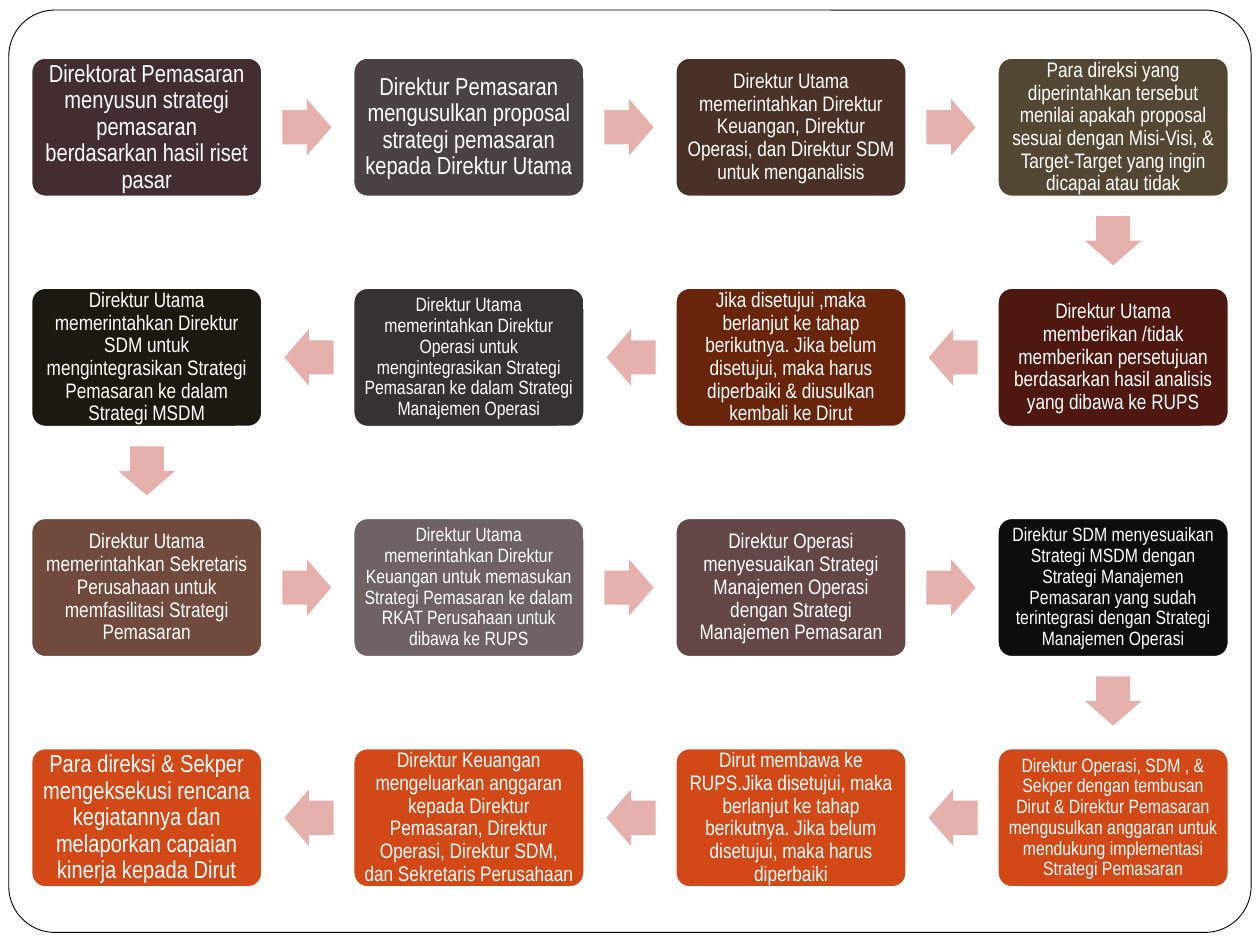
import pptx
import pptx.util
import pptx.dml.color
import pptx.enum.shapes
import pptx.enum.text

Inches, Pt = pptx.util.Inches, pptx.util.Pt
KIND = pptx.enum.shapes.MSO_SHAPE

# Steps in flow order: fill, text size, wording
STEPS = [
    ("422E2E", 14, "Direktorat Pemasaran menyusun strategi pemasaran berdasarkan hasil riset pasar"),
    ("494142", 14, "Direktur Pemasaran mengusulkan proposal strategi pemasaran kepada Direktur Utama"),
    ("4A3128", 12, "Direktur Utama memerintahkan Direktur Keuangan, Direktur Operasi, dan Direktur SDM "
                   "untuk menganalisis"),
    ("534733", 12, "Para direksi yang diperintahkan tersebut menilai apakah proposal sesuai dengan "
                   "Misi-Visi, & Target-Target yang ingin dicapai atau tidak"),
    ("4E1710", 12, "Direktur Utama memberikan /tidak memberikan persetujuan berdasarkan hasil analisis "
                   "yang dibawa ke RUPS"),
    ("69240C", 12, "Jika disetujui ,maka berlanjut ke tahap berikutnya. Jika belum disetujui, maka harus "
                   "diperbaiki & diusulkan kembali ke Dirut"),
    ("353232", 11, "Direktur Utama memerintahkan Direktur Operasi untuk mengintegrasikan Strategi "
                   "Pemasaran ke dalam Strategi Manajemen Operasi"),
    ("1C1911", 12, "Direktur Utama memerintahkan Direktur SDM untuk mengintegrasikan Strategi "
                   "Pemasaran ke dalam Strategi MSDM"),
    ("704A3D", 12, "Direktur Utama memerintahkan Sekretaris Perusahaan untuk memfasilitasi Strategi "
                   "Pemasaran"),
    ("6E6263", 11, "Direktur Utama memerintahkan Direktur Keuangan untuk memasukan Strategi Pemasaran "
                   "ke dalam RKAT Perusahaan untuk dibawa ke RUPS"),
    ("644646", 12, "Direktur Operasi menyesuaikan Strategi Manajemen Operasi dengan Strategi Manajemen "
                   "Pemasaran"),
    ("0D0D0D", 11, "Direktur SDM menyesuaikan Strategi MSDM dengan Strategi Manajemen Pemasaran yang "
                   "sudah terintegrasi dengan Strategi Manajemen Operasi"),
    ("D34817", 11, "Direktur Operasi, SDM , & Sekper dengan tembusan Dirut & Direktur Pemasaran "
                   "mengusulkan anggaran untuk mendukung implementasi Strategi Pemasaran"),
    ("D34817", 12, "Dirut membawa ke RUPS.Jika disetujui, maka berlanjut ke tahap berikutnya. Jika belum "
                   "disetujui, maka harus diperbaiki"),
    ("D34817", 12, "Direktur Keuangan mengeluarkan anggaran kepada Direktur Pemasaran, Direktur Operasi, "
                   "Direktur SDM, dan Sekretaris Perusahaan"),
    ("D34817", 14, "Para direksi & Sekper mengeksekusi rencana kegiatannya dan melaporkan capaian "
                   "kinerja kepada Dirut"),
]
COLS = 4
LEFT, RIGHT, TOP, BOTTOM = 0.25, 9.75, 0.46, 7.04
WIDE, HIGH = 1.83, 1.1
STEP_X = (RIGHT - LEFT - WIDE) / (COLS - 1)
STEP_Y = (BOTTOM - TOP - HIGH) / (len(STEPS) // COLS - 1)
ARROW_W, ARROW_H = 0.39, 0.45
REACH_X, REACH_Y = 1.27, 0.9  # box centre to arrow centre


def color(code):
    return pptx.dml.color.RGBColor.from_string(code)


def add(kind, x, y, w, h, fill, line=None, width=1):
    """Add a flat preset shape centred on x, y."""
    shape = slide.shapes.add_shape(
        kind, Inches(x - w / 2), Inches(y - h / 2), Inches(w), Inches(h))
    shape.shadow.inherit = False
    shape.fill.solid()
    shape.fill.fore_color.rgb = color(fill)
    if line:
        shape.line.color.rgb = color(line)
        shape.line.width = Pt(width)
    else:
        shape.line.fill.background()
    return shape


def write(shape, text, size):
    frame = shape.text_frame
    frame.word_wrap = True
    frame.vertical_anchor = pptx.enum.text.MSO_ANCHOR.MIDDLE
    inset = Inches(0.06 if size == 14 else 0.05)
    frame.margin_left = frame.margin_right = inset
    frame.margin_top = frame.margin_bottom = inset
    para = frame.paragraphs[0]
    para.text = text
    para.alignment = pptx.enum.text.PP_ALIGN.CENTER
    para.line_spacing = 0.9
    para.font.name = "Arial Narrow"
    para.font.size = Pt(size)
    para.font.color.rgb = color("FFFFFF")


deck = pptx.Presentation()
deck.slide_width, deck.slide_height = Inches(10), Inches(7.5)
slide = deck.slides.add_slide(deck.slide_layouts[6])

frame = add(KIND.ROUNDED_RECTANGLE, 5, 3.74, 9.86, 7.32, "FFFFFF", "000000", 0.5)
frame.adjustments[0] = 0.05

for i, (fill, size, text) in enumerate(STEPS):
    row, col = divmod(i, COLS)
    ahead = row % 2 == 0  # the flow turns round on every row
    place = col if ahead else COLS - 1 - col
    x = LEFT + WIDE / 2 + place * STEP_X
    y = TOP + HIGH / 2 + row * STEP_Y
    box = add(KIND.ROUNDED_RECTANGLE, x, y, WIDE, HIGH, fill, "FFFFFF")
    box.adjustments[0] = 0.1
    write(box, text, size)

    if i == len(STEPS) - 1:
        continue
    if col == COLS - 1:
        turn, y = 90, y + REACH_Y
    elif ahead:
        turn, x = 0, x + REACH_X
    else:
        turn, x = 180, x - REACH_X
    arrow = add(KIND.RIGHT_ARROW, x, y, ARROW_W, ARROW_H, "E6B1AC")
    arrow.adjustments[0] = 0.6
    arrow.adjustments[1] = 0.5
    arrow.rotation = turn

deck.save("out.pptx")
